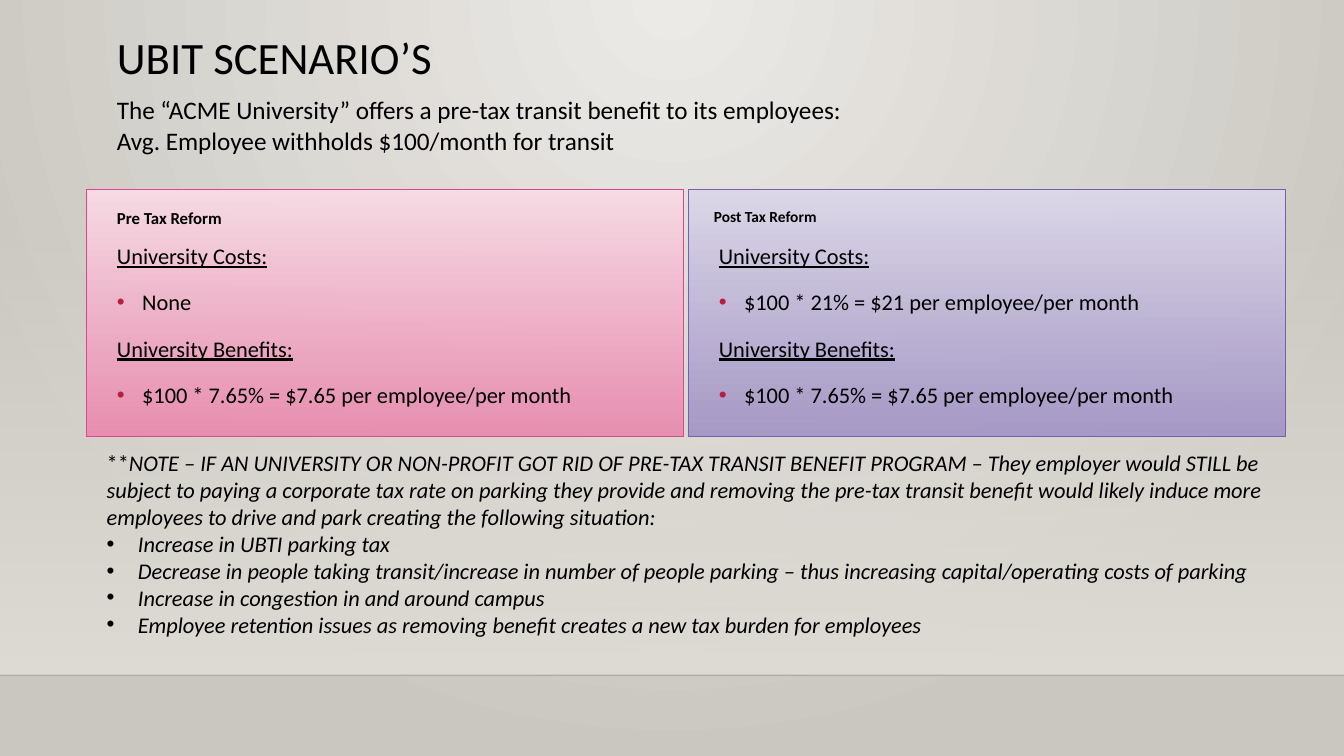
from dataclasses import dataclass
from typing import NamedTuple

from lxml import etree
from pptx import Presentation
from pptx import util as u
from pptx.dml.color import RGBColor
from pptx.enum import shapes, text
from pptx.oxml import ns

PX = 9144  # EMU, 100 px to the inch


@dataclass(frozen=True)
class Theme:
    font: str = "Calibri"
    ink: str = "000000"
    accent: str = "B71E42"
    backdrop: tuple = ("ECEAE7", "CAC7C1")
    floor: str = "DFDBD5"
    title: int = 32
    intro: int = 18
    body: int = 16
    pre_heading: int = 12
    post_heading: int = 11


THEME = Theme()


class Box(NamedTuple):
    left: int
    top: int
    width: int
    height: int

    def emu(self) -> list[int]:
        return [value * PX for value in self]


class Stop(NamedTuple):
    position: int
    color: str
    alpha: int = 100


class Run(NamedTuple):
    text: str
    italic: bool = False
    underline: bool = False


class Para(NamedTuple):
    runs: list[Run]
    indent: int = 0
    bullet_color: str = ""


@dataclass(frozen=True)
class Scenario:
    panel: Box
    stops: tuple[Stop, Stop]
    border: str
    heading: str
    heading_box: Box
    heading_size: int
    heading_leading: float
    list_box: Box
    cost: str
    heading_slot: int
    list_slot: int


BENEFIT = "$100 * 7.65% = $7.65 per employee/per month"
SCENARIOS = [
    Scenario(Box(683, 188, 592, 245), (Stop(0, "DCD8E8"), Stop(100, "A395C6", 92)), "795FAF",
             "Post Tax Reform", Box(698, 199, 508, 31), THEME.post_heading, 1.0,
             Box(703, 230, 508, 203), "$100 * 21% = $21 per employee/per month", 3, 4),
    Scenario(Box(86, 188, 592, 245), (Stop(0, "F7DCE5"), Stop(100, "EA8AAE", 92)), "DE478E",
             "Pre Tax Reform", Box(106, 198, 508, 32), THEME.pre_heading, 1.2,
             Box(106, 230, 508, 189), "None", 1, 2),
]
NOTE = ("NOTE – IF AN UNIVERSITY OR NON-PROFIT GOT RID OF PRE-TAX TRANSIT BENEFIT PROGRAM – "
        "They employer would STILL be subject to paying a corporate tax rate on parking they "
        "provide and removing the pre-tax transit benefit would likely induce more employees "
        "to drive and park creating the following situation:")
EFFECTS = [
    "Increase in UBTI parking tax",
    "Decrease in people taking transit/increase in number of people parking – thus increasing "
    "capital/operating costs of parking",
    "Increase in congestion in and around campus",
    "Employee retention issues as removing benefit creates a new tax burden for employees",
]


def add_xml(parent, tag: str, **attributes):
    return etree.SubElement(parent, ns.qn(tag), attributes)


def set_gradient(fill, parent, stops, focus: dict | None = None) -> None:
    """Fill downwards, or outwards from the focus rectangle when one is given."""
    fill.solid()
    solid = parent.find(ns.qn("a:solidFill"))
    gradient = etree.Element(ns.qn("a:gradFill"), {"rotWithShape": "1"})
    stop_list = add_xml(gradient, "a:gsLst")
    for stop in stops:
        mark = add_xml(stop_list, "a:gs", pos=str(stop.position * 1000))
        color = add_xml(mark, "a:srgbClr", val=stop.color)
        if stop.alpha < 100:
            add_xml(color, "a:alpha", val=str(stop.alpha * 1000))
    if focus:
        spread = add_xml(gradient, "a:path", path="circle")
        add_xml(spread, "a:fillToRect", **focus)
    else:
        add_xml(gradient, "a:lin", ang="5400000", scaled="0")
    parent.replace(solid, gradient)


def add_panel(slide, box: Box, stops, border: str = "") -> None:
    """Put a gradient rectangle behind the placeholders."""
    panel = slide.shapes.add_shape(shapes.MSO_SHAPE.RECTANGLE, *box.emu())
    panel.shadow.inherit = False
    set_gradient(panel.fill, panel.element.spPr, stops)
    if border:
        panel.line.color.rgb = RGBColor.from_string(border)
        panel.line.width = u.Pt(0.75)
    else:
        panel.line.fill.background()
    slide.shapes.element.insert(2, panel.element)


def add_floor_line(slide) -> None:
    edge = slide.shapes.add_connector(shapes.MSO_CONNECTOR.STRAIGHT, 0, 670 * PX, 1333 * PX, 670 * PX)
    edge.line.color.rgb = RGBColor.from_string(THEME.ink)
    edge.line.width = u.Pt(1)
    color = edge.element.spPr.find(".//" + ns.qn("a:srgbClr"))
    add_xml(color, "a:alpha", val="20000")
    add_xml(edge.element.spPr, "a:effectLst")
    slide.shapes.element.insert(2, edge.element)


def write(shape, box: Box, paras: list[Para], *, size: int, bold: bool = False,
          leading: float = 1.0, gap: int = 0, anchor=text.MSO_ANCHOR.TOP,
          fit=text.MSO_AUTO_SIZE.NONE) -> None:
    shape.left, shape.top, shape.width, shape.height = box.emu()
    frame = shape.text_frame
    frame.word_wrap = True
    frame.auto_size = fit
    frame.vertical_anchor = anchor
    for index, para in enumerate(paras):
        line = frame.add_paragraph() if index else frame.paragraphs[0]
        properties = line._p.get_or_add_pPr()
        properties.set("marL", str(para.indent * PX))
        properties.set("indent", str(-para.indent * PX))
        if para.indent:
            color = add_xml(properties, "a:buClr")
            add_xml(color, "a:srgbClr", val=para.bullet_color)
            add_xml(properties, "a:buFont", typeface="Arial")
            add_xml(properties, "a:buChar", char="•")
        else:
            add_xml(properties, "a:buNone")
        line.alignment = text.PP_ALIGN.LEFT
        line.line_spacing = leading
        line.space_before = u.Pt(gap if index else 0)
        for part in para.runs:
            run = line.add_run()
            run.text = part.text
            run.font.name = THEME.font
            run.font.size = u.Pt(size)
            run.font.bold = bold
            run.font.italic = part.italic
            run.font.underline = part.underline
            run.font.color.rgb = RGBColor.from_string(THEME.ink)


def add_scenario(slide, scenario: Scenario) -> None:
    add_panel(slide, scenario.panel, scenario.stops, scenario.border)
    write(slide.placeholders[scenario.heading_slot], scenario.heading_box,
          [Para([Run(scenario.heading)])], size=scenario.heading_size, bold=True,
          leading=scenario.heading_leading, anchor=text.MSO_ANCHOR.MIDDLE)
    lines = []
    for label, amount in (("University Costs:", scenario.cost), ("University Benefits:", BENEFIT)):
        lines += [Para([Run(label, underline=True)]), Para([Run(amount)], 25, THEME.accent)]
    write(slide.placeholders[scenario.list_slot], scenario.list_box, lines,
          size=THEME.body, leading=1.2, gap=10)


def main() -> None:
    deck = Presentation()
    deck.slide_width, deck.slide_height = 1333 * PX, 750 * PX
    slide = deck.slides.add_slide(deck.slide_layouts.get_by_name("Comparison"))

    backdrop = slide.background.fill
    backdrop.solid()
    set_gradient(backdrop, slide.element.find(".//" + ns.qn("p:bgPr")),
                 [Stop(0, THEME.backdrop[0]), Stop(100, THEME.backdrop[1])],
                 {"l": "43000", "t": "0", "r": "43000", "b": "100000"})

    write(slide.shapes.title, Box(106, 30, 1051, 115), [Para([Run("UBIT SCENARIO’S")])],
          size=THEME.title, leading=0.9)
    for scenario in reversed(SCENARIOS):
        add_scenario(slide, scenario)
    add_floor_line(slide)
    add_panel(slide, Box(0, 221, 1333, 449), [Stop(0, THEME.floor, 0), Stop(100, THEME.floor)])

    grow = text.MSO_AUTO_SIZE.SHAPE_TO_FIT_TEXT
    intro = Box(106, 89, 1051, 101)
    write(slide.shapes.add_textbox(*intro.emu()), intro,
          [Para([Run("The “ACME University” offers a pre-tax transit benefit to its employees:")]),
           Para([Run("Avg. Employee withholds $100/month for transit")])],
          size=THEME.intro, fit=grow)
    note = Box(96, 441, 1179, 205)
    write(slide.shapes.add_textbox(*note.emu()), note,
          [Para([Run("**"), Run(NOTE, italic=True)])]
          + [Para([Run(effect, italic=True)], 31, THEME.ink) for effect in EFFECTS],
          size=THEME.body, fit=grow)
    deck.save("out.pptx")


if __name__ == "__main__":
    main()
